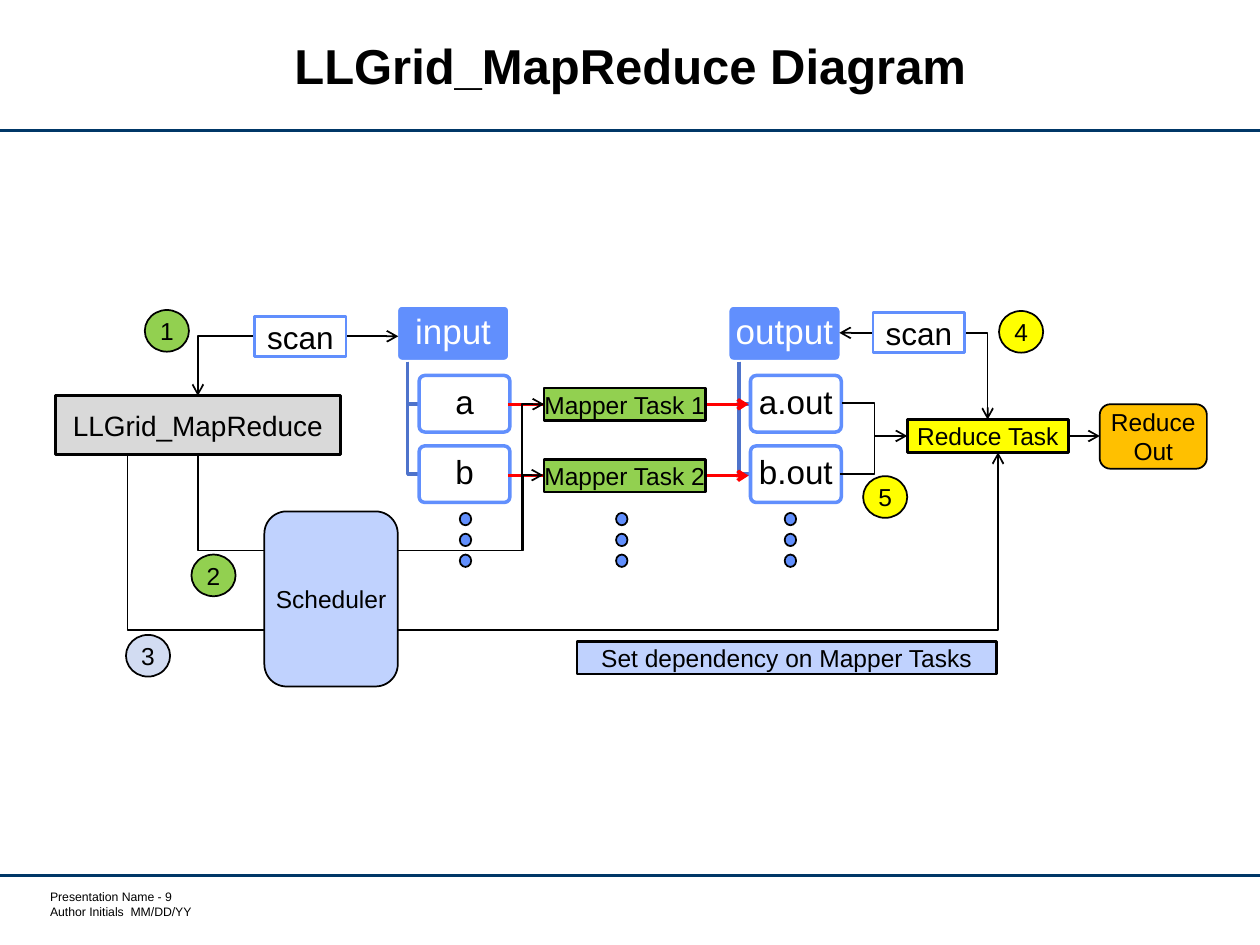
from dataclasses import dataclass
from typing import Any

from lxml.etree import SubElement
from pptx import Presentation
from pptx.dml.color import RGBColor
from pptx.enum.shapes import MSO_CONNECTOR as Connector, MSO_SHAPE as Shape
from pptx.enum.text import MSO_ANCHOR as Anchor, MSO_AUTO_SIZE as AutoSize, PP_ALIGN as Align
from pptx.oxml.ns import qn
from pptx.util import Cm, Pt


@dataclass(frozen=True)
class Theme:
    font: str = "Arial"
    black: str = "000000"
    white: str = "FFFFFF"
    rule: str = "003767"
    blue: str = "618FFD"
    branch: str = "4E73CB"
    pale_blue: str = "C0D2FE"
    mist: str = "D2DCF2"
    grey: str = "D9D9D9"
    green: str = "92D050"
    yellow: str = "FFFF00"
    orange: str = "FFC000"
    red: str = "FF0000"
    title: int = 28
    folder: int = 20
    file: int = 19
    scan: int = 18
    program: int = 16
    label: int = 14
    footer: int = 7


THEME = Theme()
TASK_EXTENT = (3.25, 0.66)
SCAN_EXTENT = (1.85, 0.81)


def write(frame, text, size=THEME.label, color=THEME.black, bold=False,
          align=Align.CENTER, anchor=Anchor.MIDDLE, wrap=False, spacing=None):
    frame.auto_size = AutoSize.NONE
    frame.word_wrap = wrap
    frame.vertical_anchor = anchor
    frame.margin_left = frame.margin_right = Cm(0.03)
    frame.margin_top = frame.margin_bottom = Cm(0.03)
    frame.text = text
    for paragraph in frame.paragraphs:
        paragraph.alignment = align
        paragraph.line_spacing = spacing
        font = paragraph.font
        font.name, font.size, font.bold = THEME.font, Pt(size), bold
        font.color.rgb = RGBColor.from_string(color)


def style_line(shape, color, width, head=False, tail=False):
    shape.line.color.rgb = RGBColor.from_string(color)
    shape.line.width = Pt(width)
    line = shape.line._get_or_add_ln()
    for tag, wanted in (("a:headEnd", head), ("a:tailEnd", tail)):
        if wanted:
            SubElement(line, qn(tag), type="arrow")


@dataclass
class Region:
    """Part of the slide whose shapes are placed in cm from its top left corner."""
    slide: Any
    left: float
    top: float

    def at(self, x, y):
        return Cm(self.left + x), Cm(self.top + y)

    def box(self, x, y, extent, fill, text="", kind=Shape.RECTANGLE, line=THEME.black,
            line_width=1.5, corner=None, **text_format):
        width, height = extent
        shape = self.slide.shapes.add_shape(kind, *self.at(x, y), Cm(width), Cm(height))
        shape.shadow.inherit = False
        shape.fill.solid()
        shape.fill.fore_color.rgb = RGBColor.from_string(fill)
        style_line(shape, line, line_width)
        if corner is not None:
            shape.adjustments[0] = corner
        if text:
            write(shape.text_frame, text, **text_format)

    def badge(self, x, y, number, fill):
        self.box(x, y, (0.89, 0.84), fill, number, kind=Shape.OVAL, line_width=1)

    def scan(self, x, y):
        self.box(x, y, SCAN_EXTENT, THEME.white, "scan", line=THEME.blue, size=THEME.scan)

    def connect(self, start, end, color=THEME.black, width=1, tail=True, bend=None):
        """Straight connector, or an elbow turning at the share `bend` of its width."""
        kind = Connector.STRAIGHT if bend is None else Connector.ELBOW
        connector = self.slide.shapes.add_connector(kind, *self.at(*start), *self.at(*end))
        style_line(connector, color, width, tail=tail)
        properties = connector._element.spPr
        SubElement(properties, qn("a:effectLst"))
        if bend is not None:
            geometry = properties.find(qn("a:prstGeom"))
            guides = geometry.find(qn("a:avLst"))
            if guides is None:
                guides = SubElement(geometry, qn("a:avLst"))
            SubElement(guides, qn("a:gd"), name="adj1", fmla=f"val {round(bend * 100000)}")

    def route(self, *points, color=THEME.black, width=1, head=False, tail=False):
        """Open line through all the points."""
        start, *others = [self.at(*point) for point in points]
        builder = self.slide.shapes.build_freeform(*start)
        builder.add_line_segments(others, close=False)
        shape = builder.convert_to_shape()
        shape.shadow.inherit = False
        shape.fill.background()
        style_line(shape, color, width, head, tail)


def add_frame(slide, title):
    """Title, the two rules and the footer."""
    page = Region(slide, 0, 0)
    for y in (2.64, 17.65):
        page.connect((0, y), (25.4, y), THEME.rule, 1.75, tail=False)
    heading = slide.shapes.title
    heading.left, heading.top = Cm(2.62), Cm(0.28)
    heading.width, heading.height = Cm(20.17), Cm(2.26)
    write(heading.text_frame, title, size=THEME.title, bold=True, wrap=True,
          spacing=Pt(THEME.title))
    footer = slide.shapes.add_textbox(Cm(0.98), Cm(17.9), Cm(3.2), Cm(0.61))
    write(footer.text_frame, "Presentation Name - 9\nAuthor Initials  MM/DD/YY",
          size=THEME.footer, align=Align.LEFT, anchor=Anchor.TOP)


def add_directory(region, name, files):
    height, pitch, indent, spine = 1.14, 1.42, 0.46, 0.23
    region.box(0, 0, (2.29, height), THEME.blue, name, kind=Shape.ROUNDED_RECTANGLE,
               line=THEME.white, line_width=2, corner=0.1,
               size=THEME.folder, color=THEME.white, spacing=0.9)
    for index, file in enumerate(files, start=1):
        top = index * pitch
        middle = top + height / 2
        region.route((spine, height), (spine, middle), (indent, middle),
                     color=THEME.branch, width=2)
        region.box(indent, top, (1.83, height), THEME.white, file,
                   kind=Shape.ROUNDED_RECTANGLE, line=THEME.blue, line_width=2,
                   corner=0.1, size=THEME.file, spacing=0.9)


def add_mappers(region, count):
    pitch, height = 1.44, TASK_EXTENT[1]
    for index in range(count):
        top = index * pitch
        middle = top + height / 2
        region.connect((0, middle), (4.85, middle), THEME.red, 2)
        region.box(0.73, top, TASK_EXTENT, THEME.green, f"Mapper Task {index + 1}")


def add_launcher(region):
    """Program and scheduler, with steps 1 to 3."""
    region.box(0, 1.73, (5.74, 1.19), THEME.grey, "LLGrid_MapReduce", size=THEME.program)
    region.route((2.87, 1.73), (2.87, 0.53), (6.91, 0.53), head=True, tail=True)
    region.scan(4.01, 0.13)
    region.route((2.87, 2.92), (2.87, 4.85), (9.4, 4.85), (9.4, 1.9), (9.85, 1.9), tail=True)
    region.connect((2.99, 4.85), (9.83, 3.33), bend=0.94)
    region.route((1.45, 2.92), (1.45, 6.45), (19, 6.45), (19, 2.87), tail=True)
    region.badge(1.8, 0, "1", THEME.green)
    region.badge(2.74, 4.93, "2", THEME.green)
    region.badge(1.42, 6.55, "3", THEME.mist)
    region.box(10.51, 6.68, (8.46, 0.66), THEME.pale_blue, "Set dependency on Mapper Tasks")
    region.box(4.21, 4.06, (2.69, 3.53), THEME.pale_blue, "Scheduler",
               kind=Shape.ROUNDED_RECTANGLE, line_width=1)


def add_reducer(region):
    """Reduce task and its result, with steps 4 and 5."""
    task_in, task_out = (1.37, 2.54), (4.62, 2.54)
    region.box(1.37, 2.21, TASK_EXTENT, THEME.yellow, "Reduce Task")
    region.route((2.99, 2.21), (2.99, 0.46), (0, 0.46), head=True, tail=True)
    region.scan(0.68, 0.05)
    region.connect((0.05, 1.88), task_in, tail=False, bend=0.5)
    region.connect((0.02, 3.3), task_in, bend=0.51)
    region.connect(task_out, (5.25, 2.54))
    region.box(5.25, 1.9, (2.16, 1.3), THEME.orange, "Reduce Out",
               kind=Shape.ROUNDED_RECTANGLE, line_width=1, wrap=True)
    region.badge(3.22, 0.02, "4", THEME.yellow)
    region.badge(0.48, 3.35, "5", THEME.yellow)


def add_ellipsis(region):
    """Three dots, one above the other."""
    for index in range(3):
        region.box(0, index * 0.42, (0.23, 0.25), THEME.blue, kind=Shape.OVAL, line_width=1)


def main():
    presentation = Presentation()
    presentation.slide_width, presentation.slide_height = Cm(25.4), Cm(19.05)
    slide = presentation.slides.add_slide(presentation.slide_layouts[5])
    add_frame(slide, "LLGrid_MapReduce Diagram")
    add_directory(Region(slide, 7.99, 6.15), "input", ("a", "b"))
    add_directory(Region(slide, 14.67, 6.15), "output", ("a.out", "b.out"))
    add_mappers(Region(slide, 10.24, 7.82), 2)
    add_launcher(Region(slide, 1.12, 6.25))
    add_reducer(Region(slide, 16.92, 6.25))
    for left in (9.27, 12.42, 15.82):
        add_ellipsis(Region(slide, left, 10.34))
    presentation.save("out.pptx")


if __name__ == "__main__":
    main()
